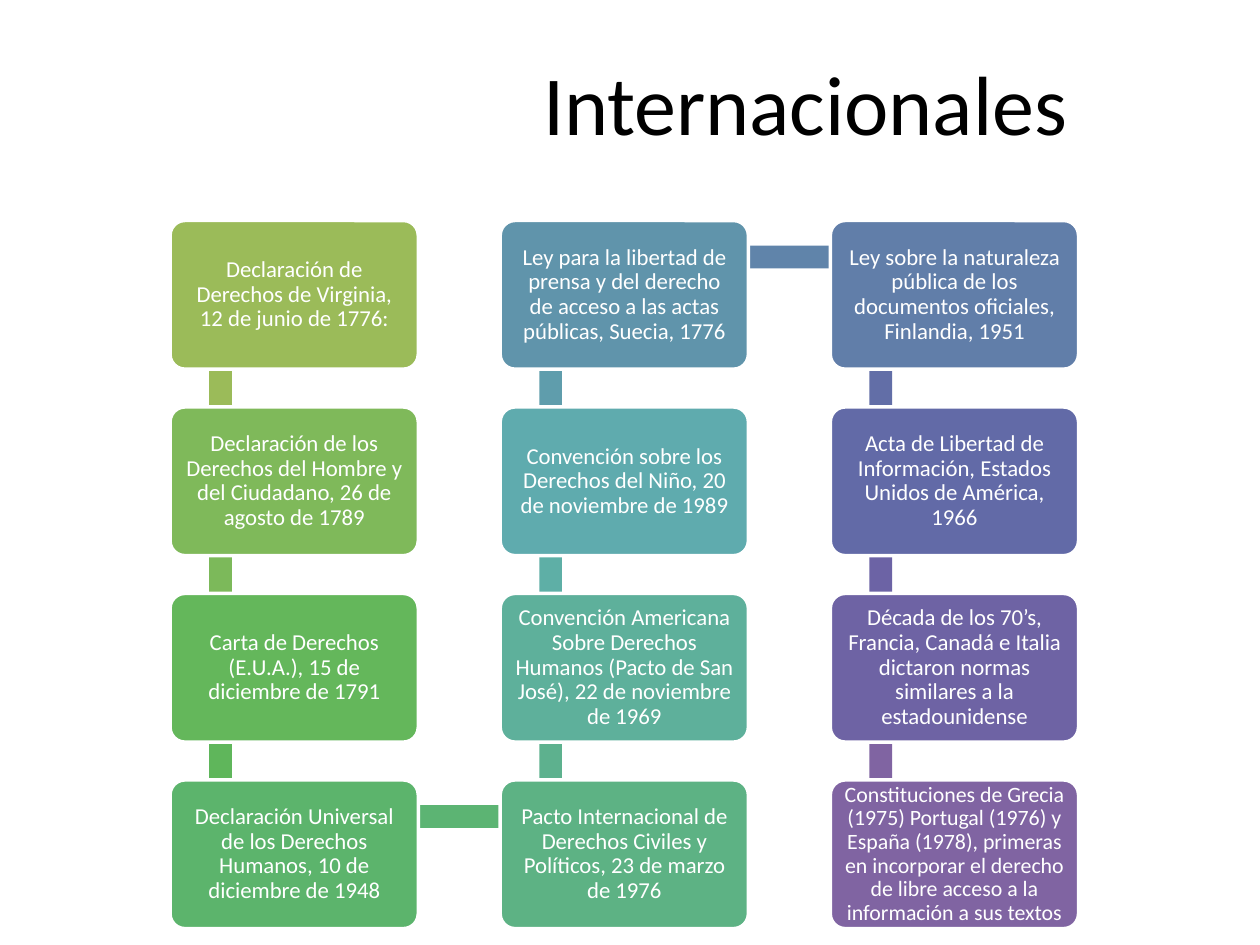
from pptx import Presentation, util as u
from pptx.dml.color import RGBColor
from pptx.enum import shapes, text

TITLE = "Internacionales"
# Milestones in reading order: wording, box colour, colour of the link to the next one
MILESTONES = [
    ("Declaración de Derechos de Virginia, 12 de junio de 1776:", "9BBB59", "9BBB59"),
    ("Declaración de los Derechos del Hombre y del Ciudadano, 26 de agosto de 1789",
     "7FB95A", "7CB95A"),
    ("Carta de Derechos (E.U.A.), 15 de diciembre de 1791", "64B75B", "5FB65B"),
    ("Declaración Universal de los Derechos Humanos, 10 de diciembre de 1948",
     "5CB46C", "5CB473"),
    ("Pacto Internacional de Derechos Civiles y Políticos, 23 de marzo de 1976",
     "5DB284", "5DB18E"),
    ("Convención Americana Sobre Derechos Humanos (Pacto de San José), "
     "22 de noviembre de 1969", "5EB09B", "5EAFA6"),
    ("Convención sobre los Derechos del Niño, 20 de noviembre de 1989",
     "5FABAE", "5F9DAC"),
    ("Ley para la libertad de prensa y del derecho de acceso a las actas públicas, "
     "Suecia, 1776", "6094AB", "6084AA"),
    ("Ley sobre la naturaleza pública de los documentos oficiales, Finlandia, 1951",
     "617EA9", "626EA7"),
    ("Acta de Libertad de Información, Estados Unidos de América, 1966",
     "626AA7", "6C63A5"),
    ("Década de los 70’s, Francia, Canadá e Italia dictaron normas similares a la "
     "estadounidense", "6E63A4", "8064A2"),
    ("Constituciones de Grecia (1975) Portugal (1976) y España (1978), primeras en "
     "incorporar el derecho de libre acceso a la información a sus textos",
     "8064A2", None),
]

# Grid in inches: the path runs down, up, then down again
ROWS = 4
GRID_LEFT, GRID_TOP = 1.35, 1.75
COLUMN_PITCH, ROW_PITCH = 2.62, 1.48
BOX_WIDTH, BOX_HEIGHT = 1.97, 1.18
ANCHOR_X, ANCHOR_Y = 0.4, 0.29  # where links meet, inside each box
LINK_THICKNESS = 0.18
FONT = "Calibri"


def color(hex_value):
    return RGBColor.from_string(hex_value)


def style(paragraph, size, hex_value):
    paragraph.font.name = FONT
    paragraph.font.size = u.Pt(size)
    paragraph.font.color.rgb = color(hex_value)


def box_corner(index):
    column, row = divmod(index, ROWS)
    if column % 2:
        row = ROWS - 1 - row
    return GRID_LEFT + column * COLUMN_PITCH, GRID_TOP + row * ROW_PITCH


def add_block(slide, kind, left, top, width, height, fill):
    block = slide.shapes.add_shape(kind, *map(u.Inches, (left, top, width, height)))
    block.shadow.inherit = False
    block.fill.solid()
    block.fill.fore_color.rgb = color(fill)
    block.line.fill.background()
    return block


def add_link(slide, index, fill):
    (x1, y1), (x2, y2) = box_corner(index), box_corner(index + 1)
    left, top = min(x1, x2) + ANCHOR_X, min(y1, y2) + ANCHOR_Y
    if x1 == x2:
        left -= LINK_THICKNESS / 2
    else:
        top -= LINK_THICKNESS / 2
    add_block(slide, shapes.MSO_SHAPE.RECTANGLE, left, top,
              abs(x2 - x1) or LINK_THICKNESS, abs(y2 - y1) or LINK_THICKNESS, fill)


def add_milestone(slide, index, wording, fill):
    box = add_block(slide, shapes.MSO_SHAPE.ROUNDED_RECTANGLE, *box_corner(index),
                    BOX_WIDTH, BOX_HEIGHT, fill)
    box.adjustments[0] = 0.1
    box.line.color.rgb = color("FFFFFF")
    box.line.width = u.Pt(2)
    frame = box.text_frame
    frame.word_wrap = True
    frame.vertical_anchor = text.MSO_ANCHOR.MIDDLE
    frame.margin_left = frame.margin_right = u.Inches(0.08)
    frame.margin_top = frame.margin_bottom = u.Inches(0.08)
    frame.text = wording
    paragraph = frame.paragraphs[0]
    paragraph.alignment = text.PP_ALIGN.CENTER
    paragraph.line_spacing = 0.9
    style(paragraph, 12.5 if len(wording) > 120 else 13, "FFFFFF")


def main():
    deck = Presentation()
    deck.slide_width, deck.slide_height = u.Inches(10), u.Inches(7.5)
    slide = deck.slides.add_slide(deck.slide_layouts[5])

    # Title
    title = slide.shapes.title
    title.left, title.top = u.Inches(4.21), u.Inches(0.36)
    title.width, title.height = u.Inches(5.2), u.Inches(0.91)
    title.text_frame.text = TITLE
    title.text_frame.vertical_anchor = text.MSO_ANCHOR.TOP
    title.text_frame.paragraphs[0].alignment = text.PP_ALIGN.LEFT
    style(title.text_frame.paragraphs[0], 48, "000000")

    # Winding path: each link lies under the boxes it joins
    for index, (wording, fill, link_fill) in enumerate(MILESTONES):
        if link_fill:
            add_link(slide, index, link_fill)
        add_milestone(slide, index, wording, fill)

    deck.save("out.pptx")


if __name__ == "__main__":
    main()
